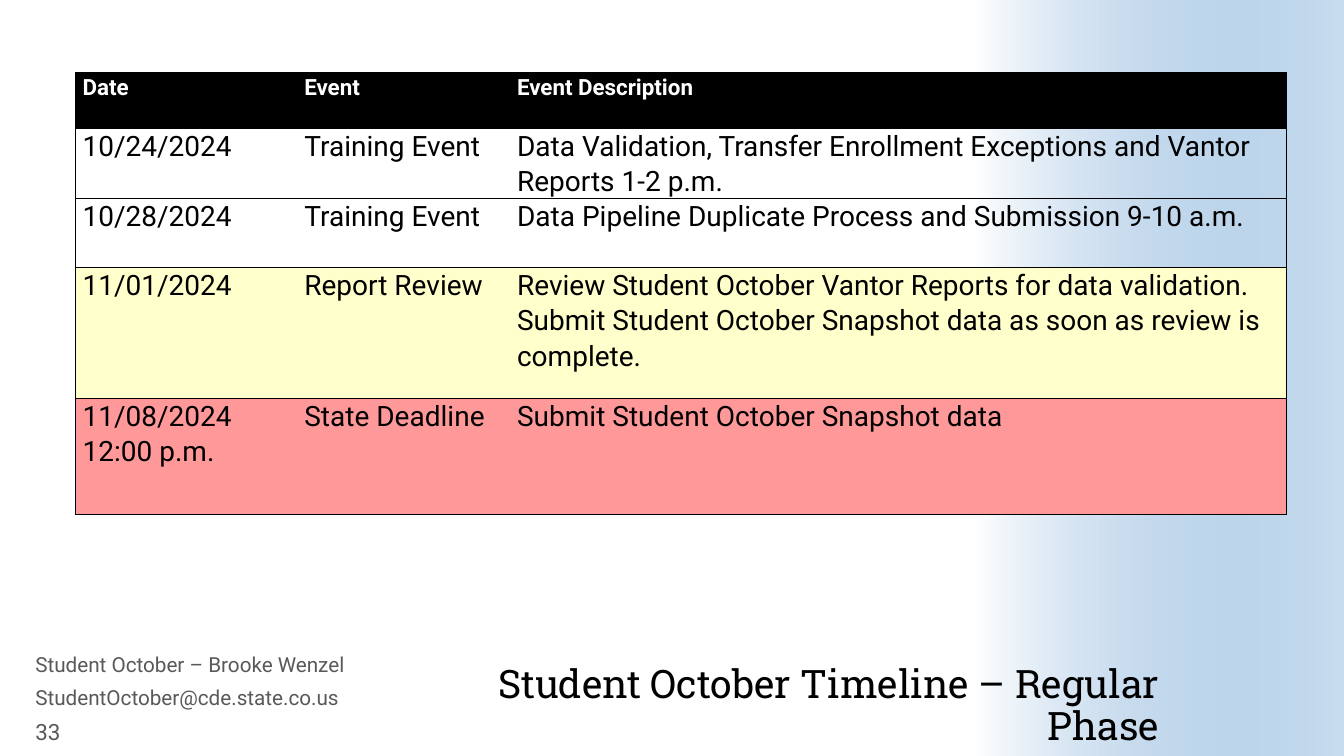
from lxml import etree
from pptx import Presentation
from pptx import util as u
from pptx.dml import color
from pptx.enum import shapes, text
from pptx.oxml import ns

BLACK, WHITE, GREY = "000000", "FFFFFF", "595959"
YELLOW, RED = "FFFFCC", "FF9999"
TITLE = {"name": "Roboto Slab", "size": u.Pt(28), "bold": False, "hex": BLACK}
HEADER = {"name": "Roboto", "size": u.Pt(16), "bold": True, "hex": WHITE}
CELL = {"name": "Roboto", "size": u.Pt(20), "bold": False, "hex": BLACK}
CONTACT = {"name": "Roboto", "size": u.Pt(14.8), "hex": GREY}
NUMBER = {"name": "Roboto", "size": u.Pt(16), "hex": GREY}

COLUMNS = [5.59, 5.36, 19.58]
ROWS = [
    (1.4, BLACK, HEADER, ("Date", "Event", "Event Description")),
    (1.5, None, CELL, ("10/24/2024", "Training Event",
                       "Data Validation, Transfer Enrollment Exceptions and Vantor Reports 1-2 p.m.")),
    (1.73, None, CELL, ("10/28/2024", "Training Event",
                        "Data Pipeline Duplicate Process and Submission 9-10 a.m.")),
    (3.3, YELLOW, CELL, ("11/01/2024", "Report Review",
                         "Review Student October Vantor Reports for data validation. "
                         "Submit Student October Snapshot data as soon as review is complete.")),
    (2.92, RED, CELL, ("11/08/2024\n12:00 p.m.", "State Deadline",
                       "Submit Student October Snapshot data")),
]


def rgb(value):
    return color.RGBColor.from_string(value)


def cm(*lengths):
    return [u.Cm(length) for length in lengths]


class TimelineSlide:
    """Holds the text style and the slide that elements are added to."""

    def __init__(self, deck):
        self.slide = deck.slides.add_slide(deck.slide_layouts[5])

    def fill_text(self, frame, words, style, spacing=1.0, align=text.PP_ALIGN.LEFT):
        frame.text = words
        for para in frame.paragraphs:
            para.line_spacing = spacing
            para.alignment = align
            for span in para.runs:
                for key, value in style.items():
                    if key == "hex":
                        span.font.color.rgb = rgb(value)
                    else:
                        setattr(span.font, key, value)

    def fade(self, at, start, end, opacity):
        panel = self.slide.shapes.add_shape(shapes.MSO_SHAPE.RECTANGLE, *cm(*at))
        panel.rotation = 270
        panel.shadow.inherit = False
        panel.line.fill.background()
        panel.fill.gradient()
        panel.fill.gradient_angle = 270
        stops = panel.fill.gradient_stops
        for stop, position, value in zip(stops, (0, 1), (start, end)):
            stop.position = position
            stop.color.rgb = rgb(value)
        last = panel._element.spPr.findall(".//" + ns.qn("a:srgbClr"))[-1]
        etree.SubElement(last, ns.qn("a:alpha"), val=str(opacity * 1000))
        tree = self.slide.shapes._spTree
        tree.remove(panel._element)
        tree.insert(2, panel._element)

    def title(self, at, words):
        box = self.slide.shapes.title
        box.left, box.top, box.width, box.height = cm(*at)
        frame = box.text_frame
        settings = {"word_wrap": True, "auto_size": text.MSO_AUTO_SIZE.NONE,
                    "vertical_anchor": text.MSO_ANCHOR.BOTTOM, "margin_left": 0,
                    "margin_right": 0, "margin_top": 0, "margin_bottom": 0}
        for key, value in settings.items():
            setattr(frame, key, value)
        self.fill_text(frame, words, TITLE, 0.9, text.PP_ALIGN.RIGHT)

    def label(self, at, words, style, spacing=1.0, anchor=text.MSO_ANCHOR.TOP):
        frame = self.slide.shapes.add_textbox(*cm(*at)).text_frame
        frame.word_wrap = True
        frame.vertical_anchor = anchor
        self.fill_text(frame, words, style, spacing)

    def border(self, cell, sides):
        properties = cell._tc.get_or_add_tcPr()
        for side in "LRTB":
            line = etree.SubElement(properties, ns.qn("a:ln" + side), w=str(u.Pt(1)))
            if side in sides:
                fill = etree.SubElement(line, ns.qn("a:solidFill"))
                etree.SubElement(fill, ns.qn("a:srgbClr"), val=BLACK)
            else:
                etree.SubElement(line, ns.qn("a:noFill"))

    def table(self, left, top, columns, rows):
        size = cm(left, top, sum(columns), sum(row[0] for row in rows))
        grid = self.slide.shapes.add_table(len(rows), len(columns), *size).table
        grid.horz_banding = False
        for column, width in zip(grid.columns, columns):
            column.width = u.Cm(width)
        for row, (height, fill, style, words) in zip(grid.rows, rows):
            row.height = u.Cm(height)
            for cell, sides, entry in zip(row.cells, ("LTB", "TB", "RTB"), words):
                cell.margin_left = cell.margin_right = u.Cm(0.18)
                cell.margin_top = cell.margin_bottom = 0
                self.border(cell, sides)
                if fill:
                    cell.fill.solid()
                    cell.fill.fore_color.rgb = rgb(fill)
                else:
                    cell.fill.background()
                self.fill_text(cell.text_frame, entry, style, 1.07)


def main():
    deck = Presentation()
    deck.slide_width, deck.slide_height = cm(33.87, 19.05)
    page = TimelineSlide(deck)
    page.fade((19.69, 4.88, 19.05, 9.3), WHITE, "488BC9", 30)
    page.title((10.82, 16.38, 18.39, 2.49), "Student October Timeline – Regular Phase")
    page.table(1.9, 1.83, COLUMNS, ROWS)
    page.label((0.64, 16.43, 9.88, 0.79), "Student October – Brooke Wenzel", CONTACT, 0.8)
    page.label((0.64, 17.25, 9.88, 0.79), "StudentOctober@cde.state.co.us", CONTACT, 0.8)
    page.label((0.64, 18.03, 2.16, 0.79), "33", NUMBER, anchor=text.MSO_ANCHOR.MIDDLE)
    deck.save("out.pptx")


if __name__ == "__main__":
    main()
